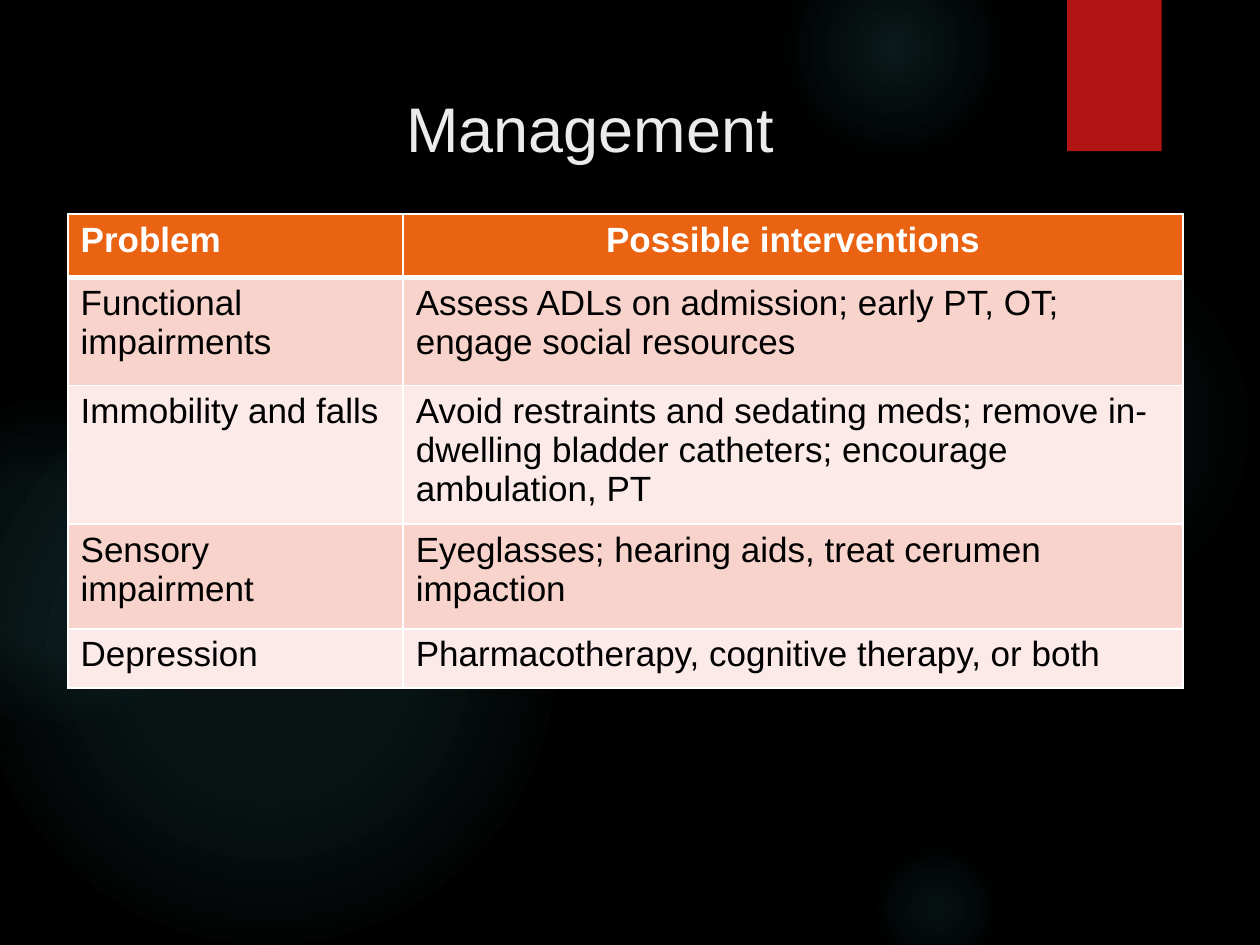
"""Build the Management slide with its table of problems and interventions."""
import pptx
import pptx.util
import pptx.oxml
import pptx.oxml.ns
import pptx.dml.color
import pptx.enum.shapes
import pptx.enum.text
import lxml.etree

Inches, Pt = pptx.util.Inches, pptx.util.Pt
RGBColor = pptx.dml.color.RGBColor
Shape = pptx.enum.shapes.MSO_SHAPE
Align = pptx.enum.text.PP_ALIGN

BLACK = RGBColor(0, 0, 0)
WHITE = RGBColor(255, 255, 255)
PALE = RGBColor(0xEB, 0xEB, 0xEB)
RED = RGBColor(0xB0, 0x15, 0x13)
ORANGE = RGBColor(0xEA, 0x63, 0x12)
BANDS = [RGBColor(0xF7, 0xD3, 0xCC), RGBColor(0xFB, 0xEA, 0xE7)]
TEAL = RGBColor(0x50, 0xB9, 0xC1)

GLOWS = [
    (6.89, 1.83, 3.08, [(0, 7), (36, 6), (69, 0)]),
    (6.22, -0.5, 1.75, [(0, 14), (36, 7), (73, 0)]),
    (6.89, 6.67, 1.08, [(0, 9), (36, 5), (66, 0)]),
    (-0.17, 2.92, 4.58, [(0, 11), (36, 10), (75, 0)]),
    (-0.92, 3.17, 2.58, [(0, 8), (36, 8), (72, 0)]),
]
TITLE = [
    ("Management", dict(name="Arial", size=Pt(36), bold=False)),
    (" ", dict(name="TeX Gyre Adventor", size=Pt(24), bold=True)),
]
ROWS = [
    ("Problem", "Possible interventions"),
    ("Functional impairments",
     "Assess ADLs on admission; early PT, OT; engage social resources"),
    ("Immobility and falls",
     "Avoid restraints and sedating meds; remove in-dwelling bladder catheters; "
     "encourage ambulation, PT"),
    ("Sensory impairment", "Eyeglasses; hearing aids, treat cerumen impaction"),
    ("Depression", "Pharmacotherapy, cognitive therapy, or both"),
]
WIDTHS = [2.66, 6.19]
HEIGHTS = [0.5, 0.86, 0.7, 0.83, 0.47]
HEAD = dict(name="Arial", size=Pt(20), bold=True)
BODY = dict(HEAD, bold=False)


def style(font, form, color):
    for key, value in form.items():
        setattr(font, key, value)
    font.color.rgb = color


def add_plain(slide, kind, *box):
    shape = slide.shapes.add_shape(kind, *map(Inches, box))
    shape.shadow.inherit = False
    shape.line.fill.background()
    return shape


def add_glow(slide, left, top, size, stops):
    shape = add_plain(slide, Shape.OVAL, left, top, size, size)
    marks = "".join(
        f'<a:gs pos="{pos * 1000}"><a:srgbClr val="{TEAL}">'
        f'<a:alpha val="{alpha * 1000}"/></a:srgbClr></a:gs>'
        for pos, alpha in stops)
    grad = pptx.oxml.parse_xml(
        f'<a:gradFill {pptx.oxml.ns.nsdecls("a")}><a:gsLst>{marks}</a:gsLst>'
        '<a:path path="circle"><a:fillToRect l="50000" t="50000" r="50000" '
        'b="50000"/></a:path></a:gradFill>')
    geom = shape._element.spPr.find(pptx.oxml.ns.qn("a:prstGeom"))
    geom.addnext(grad)


def add_edges(cell, sides):
    props = cell._tc.get_or_add_tcPr()
    for side, width in sides.items():
        props.append(pptx.oxml.parse_xml(
            f'<a:ln{side} {pptx.oxml.ns.nsdecls("a")} w="{Pt(width)}"><a:solidFill>'
            f'<a:srgbClr val="{WHITE}"/></a:solidFill></a:ln{side}>'))


def add_title(slide):
    box = slide.shapes.add_textbox(*map(Inches, (0.8, 0.61, 7.86, 0.5)))
    frame = box.text_frame
    frame.word_wrap = True
    frame.margin_top = Inches(0.1)
    para = frame.paragraphs[0]
    para.alignment = Align.CENTER
    for text, form in TITLE:
        run = para.add_run()
        run.text = text
        style(run.font, form, PALE)


def add_grid(slide):
    table = slide.shapes.add_table(
        len(ROWS), len(WIDTHS), Inches(0.54), Inches(1.7),
        Inches(sum(WIDTHS)), Inches(sum(HEIGHTS))).table
    for col, width in zip(table.columns, WIDTHS):
        col.width = Inches(width)
    for i, (texts, height) in enumerate(zip(ROWS, HEIGHTS)):
        table.rows[i].height = Inches(height)
        for j, text in enumerate(texts):
            cell = table.cell(i, j)
            add_edges(cell, dict(L=1, R=1, T=3 if i == 1 else 1, B=1 if i else 3))
            cell.fill.solid()
            cell.fill.fore_color.rgb = BANDS[(i - 1) % 2] if i else ORANGE
            para = cell.text_frame.paragraphs[0]
            para.alignment = Align.LEFT if i or not j else Align.CENTER
            run = para.add_run()
            run.text = text
            style(run.font, BODY if i else HEAD, BLACK if i else WHITE)


def main():
    deck = pptx.Presentation()
    deck.slide_width, deck.slide_height = Inches(10), Inches(7.5)
    slide = deck.slides.add_slide(deck.slide_layouts[6])
    slide.background.fill.solid()
    slide.background.fill.fore_color.rgb = BLACK
    for glow in GLOWS:
        add_glow(slide, *glow)
    flag = add_plain(slide, Shape.RECTANGLE, 8.47, 0, 0.75, 1.2)
    flag.fill.solid()
    flag.fill.fore_color.rgb = RED
    add_title(slide)
    add_grid(slide)
    deck.save("out.pptx")


if __name__ == "__main__":
    main()
